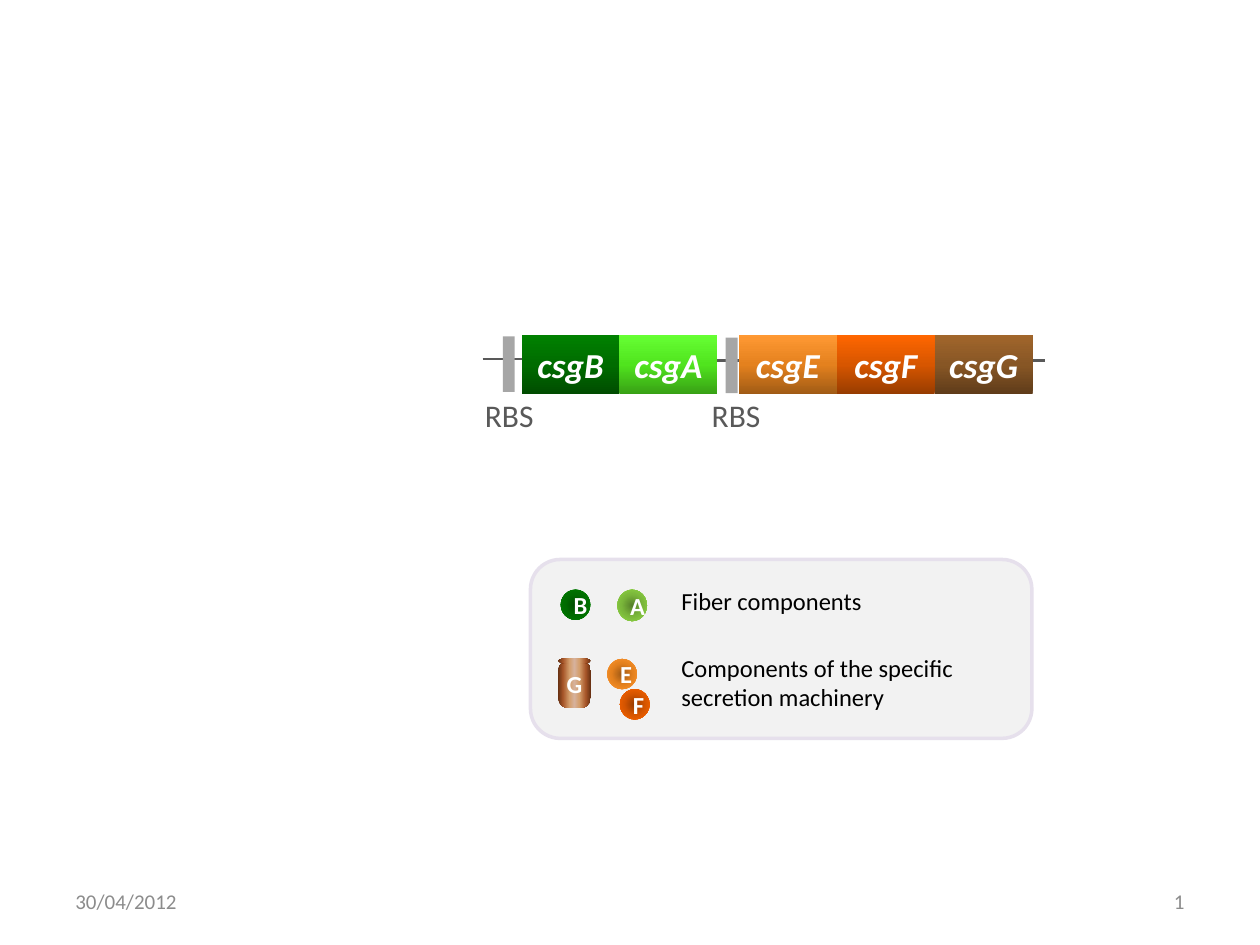
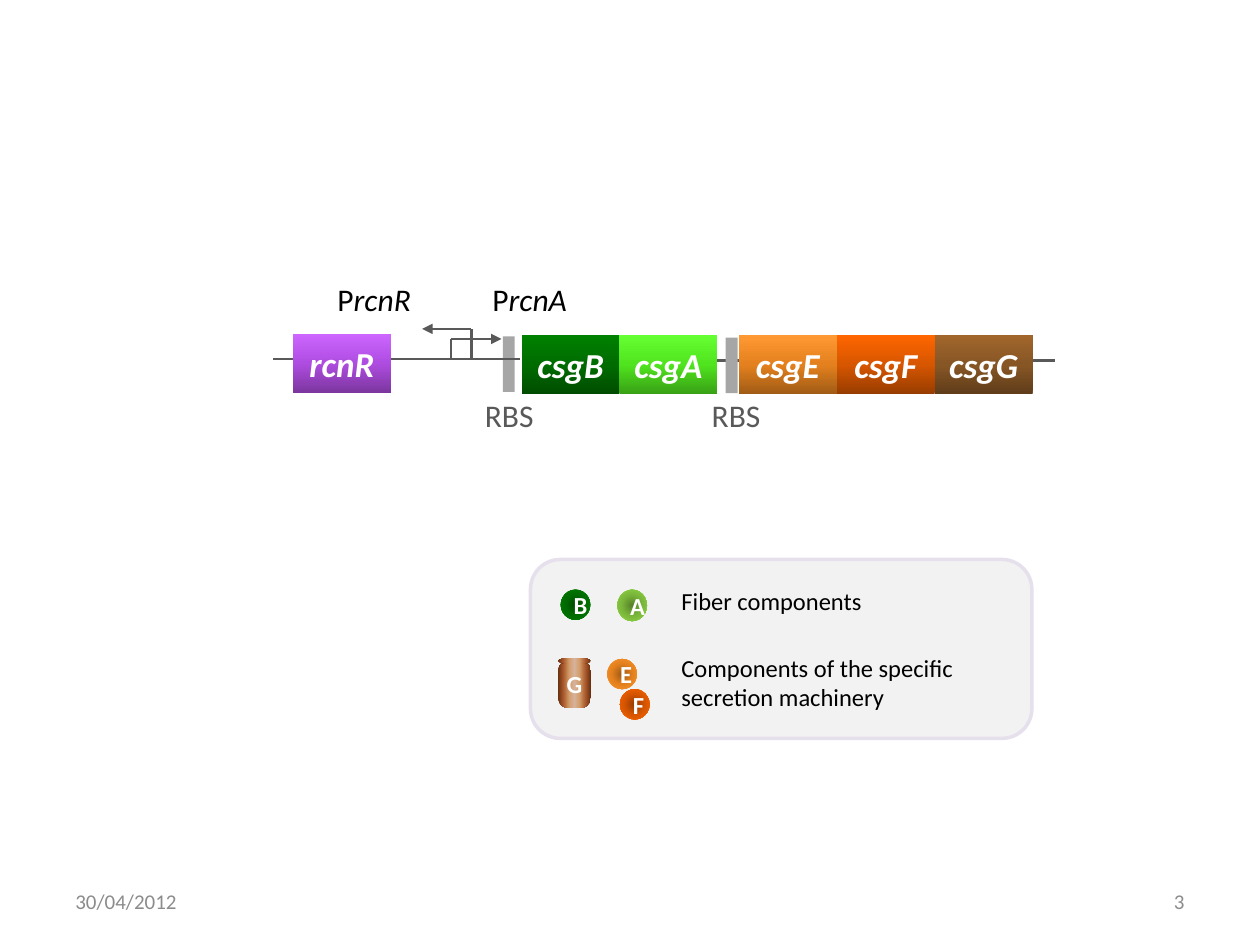
import lxml.etree
import pptx
import pptx.dml.color
import pptx.enum.shapes
import pptx.enum.text
import pptx.oxml.ns
import pptx.util

HUES = {
    "line": "595959", "foot": "8C8C8C", "site": "A6A6A6", "text": "000000",
    "white": "FFFFFF", "panel": "F2F2F2", "edge": "E6E0EC",
}
FADES = {
    "green": {0: "004C00", 50: "006C00", 100: "008000"},
    "lime": {0: "38A015", 50: "50E41E", 100: "66FF33"},
    "leaf": {0: "57812A", 50: "7BB73B", 100: "92DA46"},
    "amber": {0: "A05B15", 50: "E4811E", 100: "FF9933"},
    "orange": {0: "973C00", 50: "D75600", 100: "FF6600"},
    "brown": {0: "5F3C1A", 50: "875625", 100: "A1662B"},
    "purple": {0: "7B369E", 50: "AF4CE1", 100: "CC66FF"},
    "copper": {0: "663012", 15: "A65528", 35: "D49E6C", 50: "D6B19C",
               65: "D49E6C", 85: "A65528", 100: "663012"},
}
KIND = pptx.enum.shapes.MSO_SHAPE
SIDE = pptx.enum.text.PP_ALIGN
MID = pptx.enum.text.MSO_ANCHOR.MIDDLE
FIT = pptx.enum.text.MSO_AUTO_SIZE.SHAPE_TO_FIT_TEXT
COLS, ROWS = 100, 75
GENE = 7.77


def tint(name):
    return pptx.dml.color.RGBColor.from_string(HUES[name])


def node(root, tag, **attrs):
    return lxml.etree.SubElement(root, pptx.oxml.ns.qn(tag), attrs)


class Deck:
    font = "Calibri"

    def __init__(self):
        self.show = pptx.Presentation()
        self.show.slide_width = pptx.util.Inches(10)
        self.show.slide_height = pptx.util.Inches(7.5)

    def page(self):
        self.slide = self.show.slides.add_slide(self.show.slide_layouts[6])
        self.pool = self.slide.shapes

    def group(self):
        self.pool = self.slide.shapes.add_group_shape().shapes

    def leave(self):
        self.pool = self.slide.shapes

    def cells(self, *spots):
        units = (self.show.slide_width / COLS, self.show.slide_height / ROWS)
        return [round(spot * units[i % 2]) for i, spot in enumerate(spots)]

    def letter(self, frame, words, size, hue, side, bold=False, slant=False, tail=""):
        para = frame.paragraphs[0]
        para.text = words
        para.alignment = side
        if tail:
            para.add_run().text = tail
        for i, run in enumerate(para.runs):
            run.font.name = self.font
            run.font.size = pptx.util.Pt(size)
            run.font.color.rgb = tint(hue)
            run.font.bold = bold
            run.font.italic = slant or i > 0

    def label(self, words, spot, size=18, hue="text", wrap=False, tail=""):
        frame = self.pool.add_textbox(*self.cells(*spot)).text_frame
        frame.word_wrap = wrap
        frame.auto_size = FIT
        self.letter(frame, words, size, hue, SIDE.LEFT, tail=tail)

    def foot(self, words, left, side):
        frame = self.pool.add_textbox(*self.cells(left, 69.5, 23.3, 4)).text_frame
        frame.word_wrap = True
        frame.vertical_anchor = MID
        self.letter(frame, words, 12, "foot", side)

    def line(self, *ends, arrow=False):
        kind = pptx.enum.shapes.MSO_CONNECTOR.STRAIGHT
        link = self.pool.add_connector(kind, *self.cells(*ends))
        link.line.color.rgb = tint("line")
        link.line.width = pptx.util.Pt(1.5)
        props = link.element.spPr
        if arrow:
            node(props.find(pptx.oxml.ns.qn("a:ln")), "a:tailEnd", type="triangle")
        node(props, "a:effectLst")

    def turn(self, left, top, tip):
        self.group()
        self.line(left, 28.5, left, top)
        self.line(left, top, tip, top, arrow=True)
        self.leave()

    def shape(self, kind, spot, hue, edge=None):
        form = self.pool.add_shape(kind, *self.cells(*spot))
        form.shadow.inherit = False
        if hue in HUES:
            form.fill.solid()
            form.fill.fore_color.rgb = tint(hue)
        if edge:
            form.line.color.rgb = tint(edge)
            form.line.width = pptx.util.Pt(2)
        else:
            form.line.fill.background()
        return form

    def fade(self, form, name, angle=None):
        form.fill.gradient()
        grad = form.element.spPr.find(pptx.oxml.ns.qn("a:gradFill"))
        for old in list(grad):
            grad.remove(old)
        stops = node(grad, "a:gsLst")
        for place, code in FADES[name].items():
            node(node(stops, "a:gs", pos=str(place * 1000)), "a:srgbClr", val=code)
        if angle is None:
            ring = node(grad, "a:path", path="circle")
            node(ring, "a:fillToRect", l="50000", t="50000", r="50000", b="50000")
        else:
            node(grad, "a:lin", ang=str(angle * 60000), scaled="0")

    def mark(self, form, words, size=14, slant=False, wrap=True):
        frame = form.text_frame
        frame.word_wrap = wrap
        frame.vertical_anchor = MID
        self.letter(frame, words, size, "white", SIDE.CENTER, True, slant)

    def gene(self, words, left, top, hue):
        form = self.shape(KIND.RECTANGLE, (left, top, GENE, 4.7), hue)
        self.fade(form, hue, 270)
        self.mark(form, words, 20, slant=True)

    def row(self, left, genes):
        for i, (words, hue) in enumerate(genes):
            self.gene(words, left + i * GENE, 26.6, hue)

    def site(self, left, top, text):
        self.shape(KIND.RECTANGLE, (left, top, 0.95, 4.4), "site")
        self.label("RBS", (text, 30.9, 5.9, 4), hue="line")

    def ball(self, words, left, top, hue, tall=2.4):
        form = self.shape(KIND.OVAL, (left, top, 2.35, tall), hue)
        self.fade(form, hue)
        self.mark(form, words)

    def legend(self):
        self.group()
        self.shape(KIND.ROUNDED_RECTANGLE, (42.1, 44.4, 39.8, 14.2), "panel", "edge")
        self.ball("B", 44.5, 46.8, "green")
        self.ball("F", 49.2, 54.7, "orange")
        self.ball("E", 48.2, 52.3, "amber")
        self.ball("A", 49, 46.8, "leaf", 2.5)
        tube = self.shape(KIND.ROUNDED_RECTANGLE, (44.3, 52.4, 2.6, 3.8), "copper")
        tube.adjustments[0] = 0.33
        self.mark(tube, "G", wrap=False)
        lid = self.shape(KIND.OVAL, (44.3, 52.2, 2.6, 0.5), "copper")
        for part in (tube, lid):
            self.fade(part, "copper", 0)
        self.label("Fiber components", (53.1, 46, 16.4, 3.4), 14)
        self.label("Components of the specific secretion machinery",
                   (53.1, 51.3, 28.7, 5.7), 14, wrap=True)
        self.leave()

    def scene(self, number, start, stop, end):
        self.page()
        self.line(start, 28.5, stop, 28.5)
        self.foot("30/04/2012", 5, SIDE.LEFT)
        self.foot(number, 71.7, SIDE.RIGHT)
        for left in (53.1, end - 10.25):
            self.line(left, 28.6, left + 10.25, 28.6)
        self.group()
        self.row(58.65, [("csgE", "amber"), ("csgF", "orange"), ("csgG", "brown")])
        self.leave()
        self.row(41.4, [("csgB", "green"), ("csgA", "lime")])
        self.site(57.6, 26.8, 55.5)
        self.legend()
        self.site(39.9, 26.7, 37.5)

    def switch(self):
        self.line(31.1, 28.5, 41.3, 28.5)
        self.gene("rcnR", 23.25, 26.5, "purple")
        self.turn(37.4, 26.1, 33.5)
        self.turn(35.8, 26.9, 39.8)
        for tail, left in (("rcnA", 38.1), ("rcnR", 25.8)):
            self.label("P", (left, 21.7, 8, 4), tail=tail)


def main():
    deck = Deck()
    deck.scene("1", 38.3, 48.5, 82.9)
    deck.scene("3", 21.7, 35, 83.7)
    deck.switch()
    deck.show.save("out.pptx")


if __name__ == "__main__":
    main()
